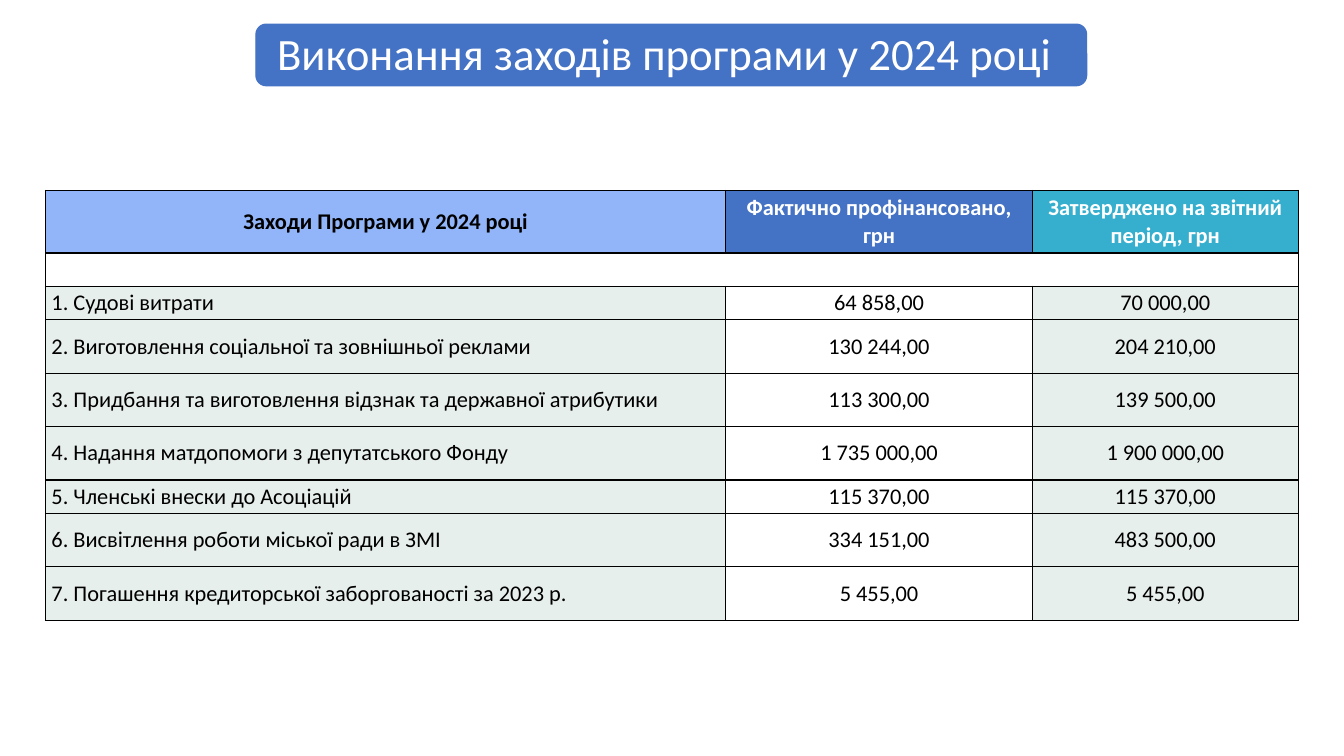
from lxml import etree
from pptx import Presentation
from pptx import util as u
from pptx.dml.color import RGBColor
from pptx.enum import shapes, text
from pptx.oxml.ns import qn

SLIDE_W, SLIDE_H = u.Inches(13.33), u.Inches(7.5)
BLUE, WHITE, BLACK, PALE = "4472C4", "FFFFFF", "000000", "E7EFEC"
HEADINGS = [
    ("Заходи Програми у 2024 році", "91B5F8", BLACK),
    ("Фактично профінансовано, грн", BLUE, WHITE),
    ("Затверджено на звітний період, грн", "36AFCE", WHITE),
]
MEASURES = [
    ("1. Судові витрати", "64 858,00", "70 000,00"),
    ("2. Виготовлення соціальної та зовнішньої реклами", "130 244,00", "204 210,00"),
    ("3. Придбання та виготовлення відзнак та державної атрибутики", "113 300,00", "139 500,00"),
    ("4. Надання матдопомоги з депутатського Фонду", "1 735 000,00", "1 900 000,00"),
    ("5. Членські внески до Асоціацій", "115 370,00", "115 370,00"),
    ("6. Висвітлення роботи міської ради в ЗМІ", "334 151,00", "483 500,00"),
    ("7. Погашення кредиторської заборгованості за 2023 р.", "5 455,00", "5 455,00"),
]
# Column widths and row heights in percent of the slide
COLUMN_SHARES = [50.63, 22.8, 19.8]
HEADER, LOW, TALL = 8.27, 4.4, 7.07
ROW_SHARES = [HEADER, LOW, LOW, TALL, TALL, TALL, LOW, TALL, TALL]


def across(share):
    """Percent of the slide width."""
    return round(SLIDE_W * share / 100)


def down(share):
    """Percent of the slide height."""
    return round(SLIDE_H * share / 100)


def box(x, y, w, h):
    return across(x), down(y), across(w), down(h)


def color(code):
    return RGBColor.from_string(code)


def style_text(paragraph, size, ink, bold=False):
    for run in paragraph.runs:
        run.font.name = "Calibri"
        run.font.size = u.Pt(size)
        run.font.bold = bold
        run.font.color.rgb = color(ink)


def add_title(slide, title):
    banner = slide.shapes.add_shape(
        shapes.MSO_SHAPE.ROUNDED_RECTANGLE, *box(19.05, 3.2, 61.8, 8.13))
    banner.shadow.inherit = False
    banner.fill.solid()
    banner.fill.fore_color.rgb = color(BLUE)
    banner.line.color.rgb = color(BLUE)
    banner.line.width = u.Pt(1)

    frame = slide.shapes.add_textbox(*box(19.88, 3.6, 61.13, 9.6)).text_frame
    frame.word_wrap = True
    frame.text = title
    frame.paragraphs[0].line_spacing = 0.9
    style_text(frame.paragraphs[0], 32, WHITE)


def add_borders(cell):
    properties = cell._tc.get_or_add_tcPr()
    for position, side in enumerate(("lnL", "lnR", "lnT", "lnB")):
        border = etree.Element(qn(f"a:{side}"), w=str(u.Pt(1)))
        fill = etree.SubElement(border, qn("a:solidFill"))
        etree.SubElement(fill, qn("a:srgbClr"), val=BLACK)
        properties.insert(position, border)


def fill_cell(cell, words, fill, ink=BLACK, bold=False, centred=True):
    cell.text = words
    cell.vertical_anchor = text.MSO_ANCHOR.MIDDLE
    cell.margin_left = cell.margin_right = u.Inches(0.06)
    # An empty cell has no text margin, so its row keeps the given height
    cell.margin_top = cell.margin_bottom = u.Inches(0.03 if words else 0)
    cell.fill.solid()
    cell.fill.fore_color.rgb = color(fill)
    paragraph = cell.text_frame.paragraphs[0]
    paragraph.alignment = text.PP_ALIGN.CENTER if centred else text.PP_ALIGN.LEFT
    style_text(paragraph, 16, ink, bold)
    add_borders(cell)


def add_measures_table(slide):
    table = slide.shapes.add_table(
        len(ROW_SHARES), len(COLUMN_SHARES),
        *box(3.38, 25.2, sum(COLUMN_SHARES), sum(ROW_SHARES))).table
    for column, share in zip(table.columns, COLUMN_SHARES):
        column.width = across(share)
    for row, share in zip(table.rows, ROW_SHARES):
        row.height = down(share)

    for col, (heading, fill, ink) in enumerate(HEADINGS):
        fill_cell(table.cell(0, col), heading, fill, ink, bold=True)
        fill_cell(table.cell(1, col), "", WHITE)
    table.cell(1, 0).merge(table.cell(1, len(HEADINGS) - 1))
    for row, measure in enumerate(MEASURES, start=2):
        for col, words in enumerate(measure):
            fill_cell(table.cell(row, col), words,
                      WHITE if col == 1 else PALE, centred=col > 0)


def main():
    deck = Presentation()
    deck.slide_width, deck.slide_height = SLIDE_W, SLIDE_H
    slide = deck.slides.add_slide(deck.slide_layouts[6])
    add_measures_table(slide)
    add_title(slide, "Виконання заходів програми у 2024 році")
    deck.save("out.pptx")


if __name__ == "__main__":
    main()
